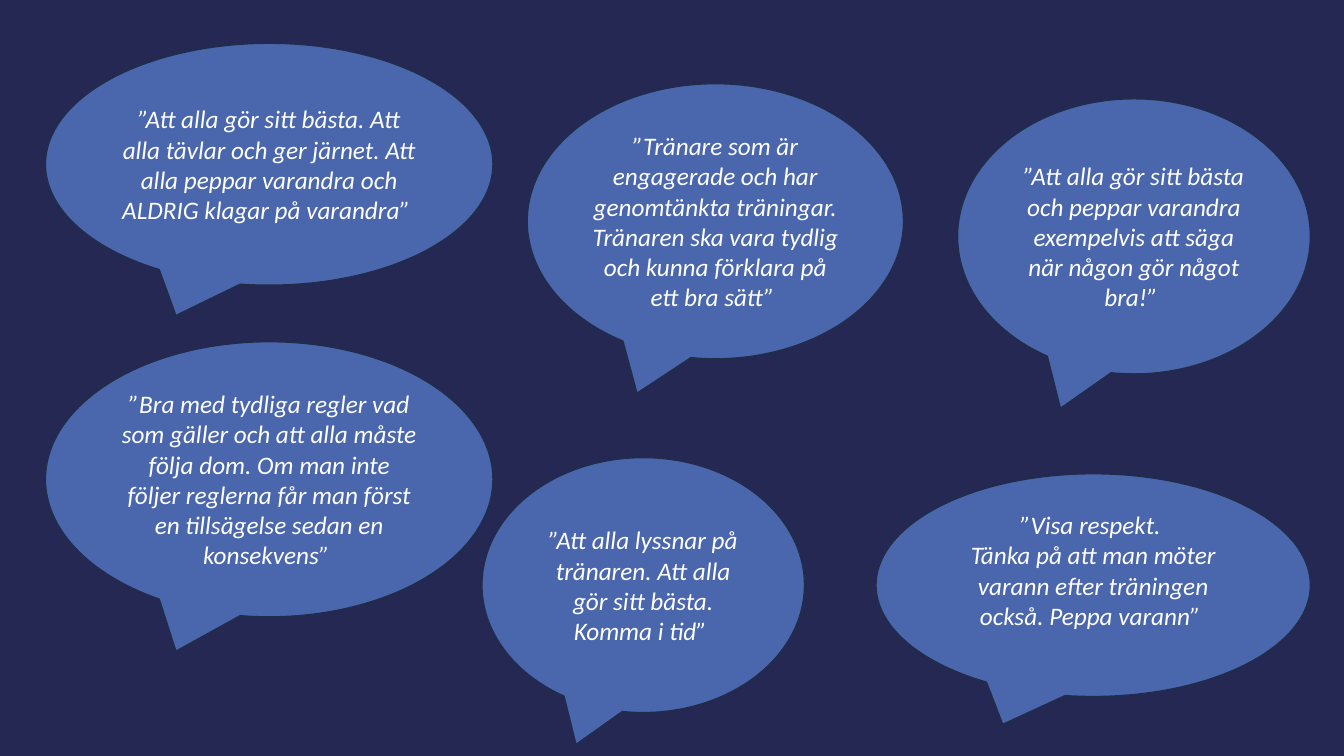
from pptx import Presentation
from pptx.dml.color import RGBColor
from pptx.enum.shapes import MSO_SHAPE as Shape
from pptx.enum.text import MSO_ANCHOR as Anchor, PP_ALIGN as Align
from pptx.util import Inches, Pt

COLORS = {"background": "242852", "bubble": "4A66AC", "outline": "202D4B", "text": "FFFFFF"}

# left, top, width, height in percent of the slide; bottom inset in inches; paragraphs
QUOTES = [
    (3.38, 5.73, 33.3, 32, 0.05,
     ["”Att alla gör sitt bästa. Att alla tävlar och ger järnet. "
      "Att alla peppar varandra och ALDRIG klagar på varandra” "]),
    (3.38, 45.2, 33.3, 36.4, 0.05,
     ["”Bra med tydliga regler vad som gäller och att alla måste följa dom. "
      "Om man inte följer reglerna får man först en tillsägelse sedan en konsekvens” "]),
    (71.25, 13.07, 26.25, 36.4, 0.05,
     ["”Att alla gör sitt bästa och peppar varandra exempelvis att säga "
      "när någon gör något bra!” "]),
    (39.23, 11.07, 28, 36.4, 0.05,
     ["”Tränare som är engagerade och har genomtänkta träningar. "
      "Tränaren ska vara tydlig och kunna förklara på ett bra sätt” "]),
    (35.86, 60.53, 24, 33.73, 0.05,
     ["”Att alla lyssnar på tränaren. Att alla gör sitt bästa. Komma i tid” "]),
    (65.18, 62.67, 32.32, 29.47, 0.35,
     ["”Visa respekt. ",
      "Tänka på att man möter varann efter träningen också. Peppa varann” "]),
]


def color(name):
    return RGBColor.from_string(COLORS[name])


deck = Presentation()
deck.slide_width, deck.slide_height = Inches(13.33), Inches(7.5)
column, row = deck.slide_width / 100, deck.slide_height / 100
page = deck.slides.add_slide(deck.slide_layouts[6])
page.background.fill.solid()
page.background.fill.fore_color.rgb = color("background")

for left, top, width, height, bottom_inset, paragraphs in QUOTES:
    bubble = page.shapes.add_shape(
        Shape.OVAL_CALLOUT,
        int(left * column), int(top * row), int(width * column), int(height * row))
    bubble.shadow.inherit = False
    bubble.fill.solid()
    bubble.fill.fore_color.rgb = color("bubble")
    bubble.line.color.rgb = color("outline")
    bubble.line.width = Pt(1)

    frame = bubble.text_frame
    frame.word_wrap = True
    frame.vertical_anchor = Anchor.MIDDLE
    frame.margin_bottom = Inches(bottom_inset)
    frame.text = "\n".join(paragraphs)
    for para in frame.paragraphs:
        para.alignment = Align.CENTER
        para.font.name = "Calibri"
        para.font.size = Pt(18)
        para.font.italic = True
        para.font.color.rgb = color("text")

deck.save("out.pptx")
